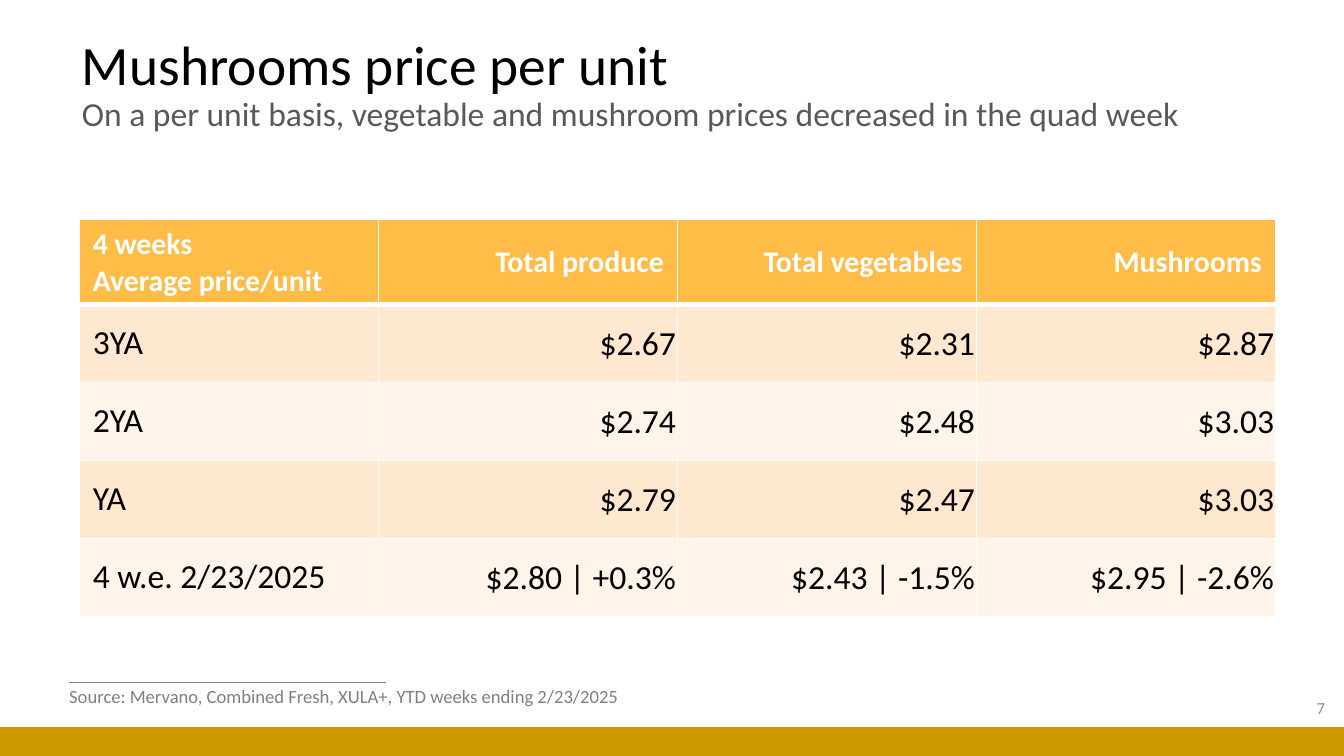
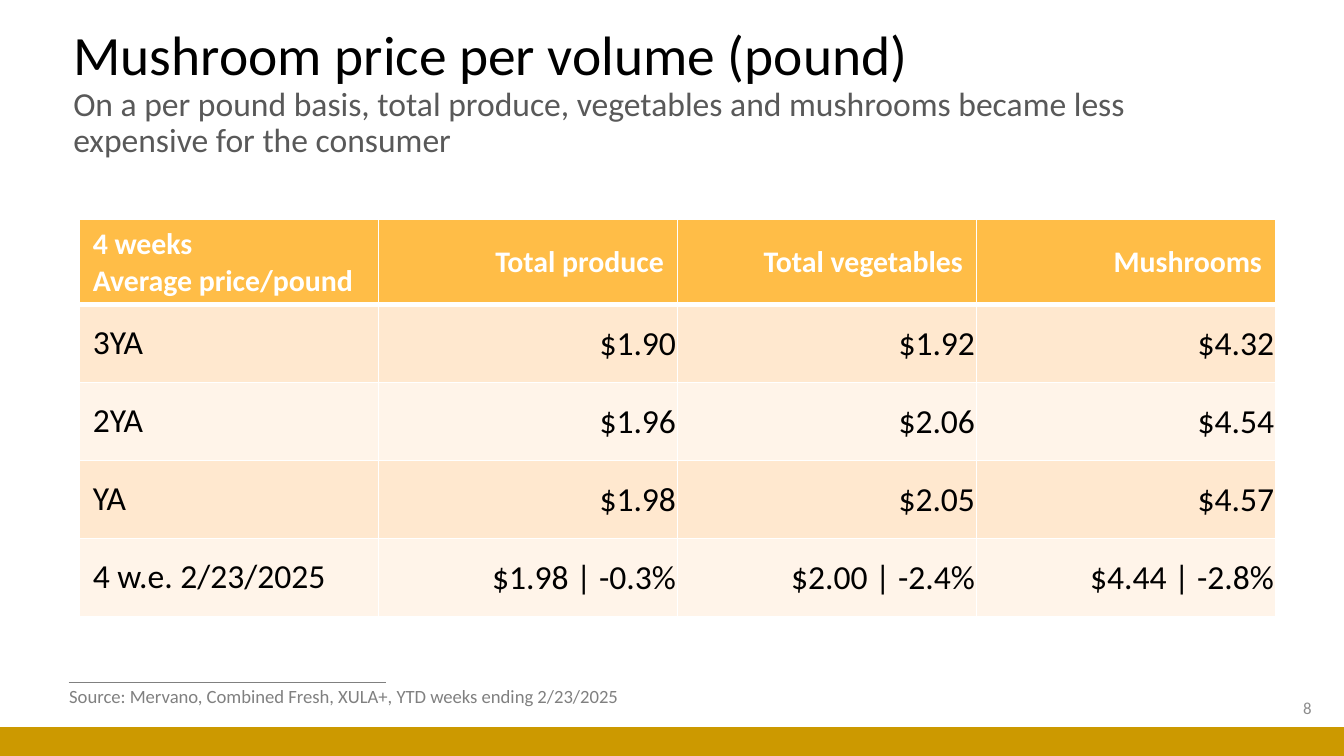
from dataclasses import dataclass

from pptx import Presentation
from pptx.dml.color import RGBColor
from pptx.enum import shapes, text
from pptx.oxml import ns
from pptx.util import Pt
from lxml import etree


@dataclass(frozen=True)
class Theme:
    font: str = "Calibri"
    black: str = "000000"
    white: str = "FFFFFF"
    subtitle: str = "595959"
    grey: str = "808080"
    page: str = "8C8C8C"
    band: str = "CC9900"
    header: str = "FFBD47"
    rows: tuple = ("FFE8CF", "FFF4E9")
    title_size: float = 29.7
    body_size: float = 18
    header_size: float = 16
    source_size: float = 10
    page_size: float = 9


T = Theme()
WIDTH, HEIGHT = 720, 405
RIGHT, LEFT = text.PP_ALIGN.RIGHT, text.PP_ALIGN.LEFT
MIDDLE = text.MSO_ANCHOR.MIDDLE

SOURCE = "Source: Mervano, Combined Fresh, XULA+, YTD weeks ending 2/23/2025"
COLUMNS = ["Total produce", "Total vegetables", "Mushrooms"]
PERIODS = ["3YA", "2YA", "YA", "4 w.e. 2/23/2025"]
TABLE_BOX = (42.5, 117.5, 640.8, 209.7)
HEADER_HEIGHT = 42.5

SLIDES = [
    {
        "title": "Mushrooms price per unit",
        "subtitle": "On a per unit basis, vegetable and mushroom prices decreased in the quad week",
        "title_box": (36.8, 26.8, 652.3, 38.7),
        "unit": "unit",
        "prices": [
            ["$2.67", "$2.31", "$2.87"],
            ["$2.74", "$2.48", "$3.03"],
            ["$2.79", "$2.47", "$3.03"],
            ["$2.80 | +0.3%", "$2.43 | -1.5%", "$2.95 | -2.6%"],
        ],
        "page": "7",
        "page_box": (555, 368.2, 162, 21.6),
    },
    {
        "title": "Mushroom price per volume (pound)",
        "subtitle": "On a per pound basis, total produce, vegetables and mushrooms "
                    "became less expensive for the consumer",
        "title_box": (32.2, 16, 629.3, 68.4),
        "unit": "pound",
        "prices": [
            ["$1.90", "$1.92", "$4.32"],
            ["$1.96", "$2.06", "$4.54"],
            ["$1.98", "$2.05", "$4.57"],
            ["$1.98 | -0.3%", "$2.00 | -2.4%", "$4.44 | -2.8%"],
        ],
        "page": "8",
        "page_box": (547.7, 368.2, 162, 21.6),
    },
]


def rgb(color):
    return RGBColor.from_string(color)


def apply(target, **values):
    for name, value in values.items():
        setattr(target, name, value)


def add_run(p, content, size, color, bold=False):
    r = p.add_run()
    r.text = content
    apply(r.font, name=T.font, size=Pt(size), bold=bold)
    r.font.color.rgb = rgb(color)


def add_box(s, box, **frame):
    tf = s.shapes.add_textbox(*map(Pt, box)).text_frame
    apply(tf, **{"word_wrap": True, "auto_size": text.MSO_AUTO_SIZE.NONE, **frame})
    return tf


# Footer: rule, band, page number and source
def add_footer(s, page, page_box):
    line = s.shapes.add_connector(
        shapes.MSO_CONNECTOR.STRAIGHT, Pt(36.8), Pt(365.6), Pt(206.6), Pt(365.6))
    line.line.color.rgb = rgb(T.grey)
    line.line.width = Pt(0.5)
    etree.SubElement(line._element.spPr, ns.qn("a:effectLst"))

    band_top = 389.6
    band = s.shapes.add_shape(
        shapes.MSO_SHAPE.RECTANGLE, 0, Pt(band_top), Pt(WIDTH), Pt(HEIGHT - band_top))
    band.shadow.inherit = False
    band.fill.solid()
    band.fill.fore_color.rgb = rgb(T.band)
    band.line.fill.background()

    p = add_box(s, page_box, vertical_anchor=MIDDLE).paragraphs[0]
    p.alignment = RIGHT
    add_run(p, page, T.page_size, T.page)

    tf = add_box(s, (30, 363.6, 317.5, 19.4), word_wrap=False,
                 auto_size=text.MSO_AUTO_SIZE.SHAPE_TO_FIT_TEXT)
    add_run(tf.paragraphs[0], SOURCE, T.source_size, T.grey)


# Title with its subtitle on the next line
def add_title(s, box, title, subtitle):
    p = add_box(s, box, vertical_anchor=MIDDLE).paragraphs[0]
    p.line_spacing = 0.9
    add_run(p, title, T.title_size, T.black)
    p.add_line_break()
    add_run(p, subtitle, T.body_size, T.subtitle)


def set_borders(cell, **widths):
    tcPr = cell._tc.get_or_add_tcPr()
    for side in "LRTB":
        ln = etree.SubElement(tcPr, ns.qn(f"a:ln{side}"), w=str(Pt(widths.get(side, 1))))
        fill = etree.SubElement(ln, ns.qn("a:solidFill"))
        etree.SubElement(fill, ns.qn("a:srgbClr"), val=T.white)


def fill_cell(cell, lines, fill, size, color, bold, align):
    cell.fill.solid()
    cell.fill.fore_color.rgb = rgb(fill)
    cell.vertical_anchor = MIDDLE
    tf = cell.text_frame
    for i, content in enumerate(lines):
        p = tf.add_paragraph() if i else tf.paragraphs[0]
        p.alignment = align
        add_run(p, content, size, color, bold)


# Price table: header row, then one banded row per period
def add_price_table(s, box, unit, prices):
    header = [["4 weeks", f"Average price/{unit}"]] + [[name] for name in COLUMNS]
    body = [[[value] for value in [period, *row]] for period, row in zip(PERIODS, prices)]
    grid = [header] + body
    table = s.shapes.add_table(len(grid), len(header), *map(Pt, box)).table
    apply(table, first_row=False, horz_banding=False)

    for column in table.columns:
        column.width = Pt(box[2] / len(header))
    for i, row in enumerate(table.rows):
        row.height = Pt((box[3] - HEADER_HEIGHT) / len(body) if i else HEADER_HEIGHT)

    for i, row in enumerate(grid):
        for j, lines in enumerate(row):
            cell = table.cell(i, j)
            align = RIGHT if j else LEFT
            if i == 0:
                set_borders(cell, B=3)
                fill_cell(cell, lines, T.header, T.header_size, T.white, True, align)
                continue
            set_borders(cell, T=3 if i == 1 else 1)
            fill_cell(cell, lines, T.rows[(i - 1) % 2], T.body_size, T.black, False, align)
            if j:
                apply(cell, margin_left=Pt(0.7), margin_top=Pt(0.7),
                      margin_right=Pt(0.7), margin_bottom=0)


def add_price_slide(prs, data):
    s = prs.slides.add_slide(prs.slide_layouts[6])
    add_footer(s, data["page"], data["page_box"])
    add_title(s, data["title_box"], data["title"], data["subtitle"])
    add_price_table(s, TABLE_BOX, data["unit"], data["prices"])


def main():
    prs = Presentation()
    apply(prs, slide_width=Pt(WIDTH), slide_height=Pt(HEIGHT))
    for data in SLIDES:
        add_price_slide(prs, data)
    prs.save("out.pptx")


if __name__ == "__main__":
    main()
